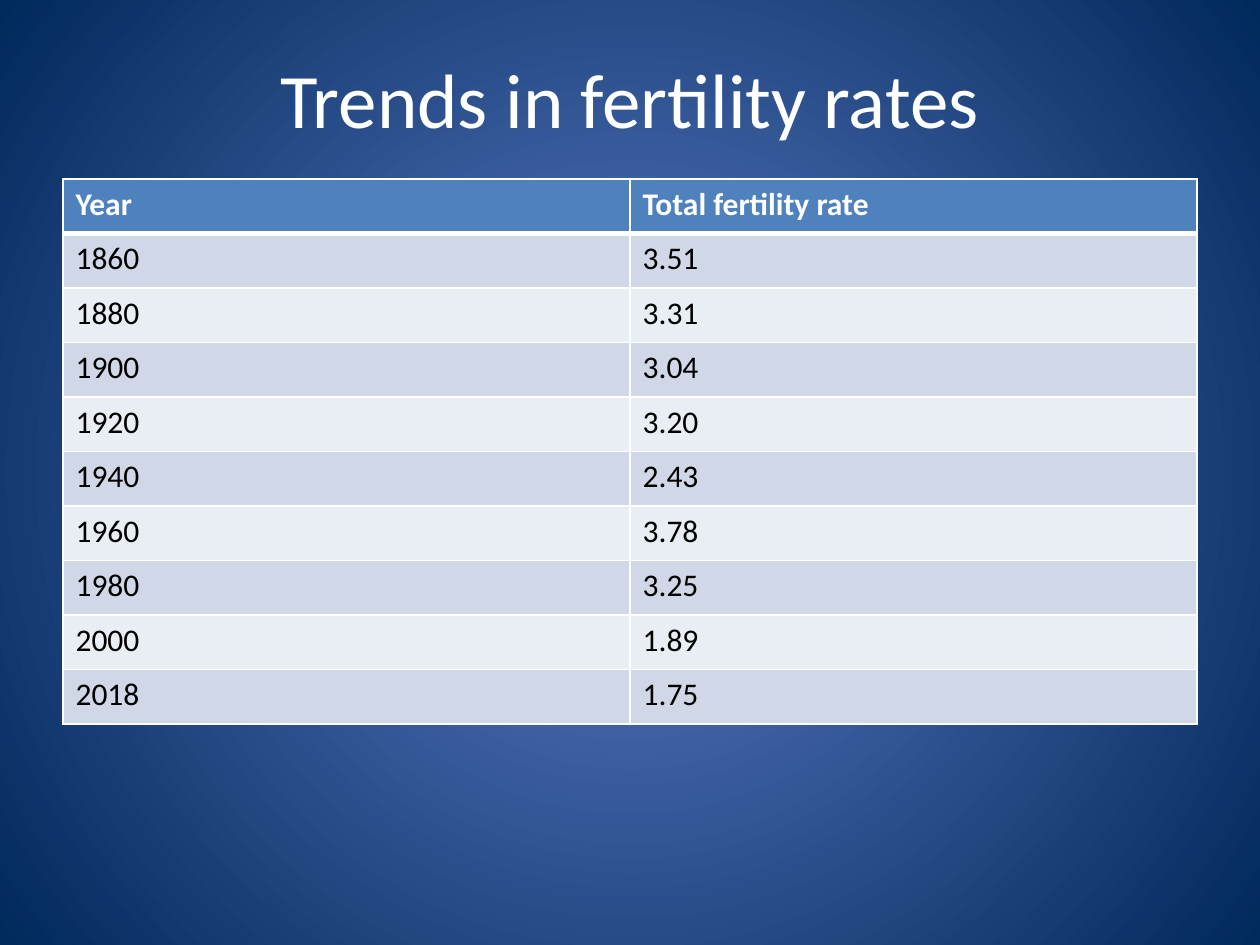
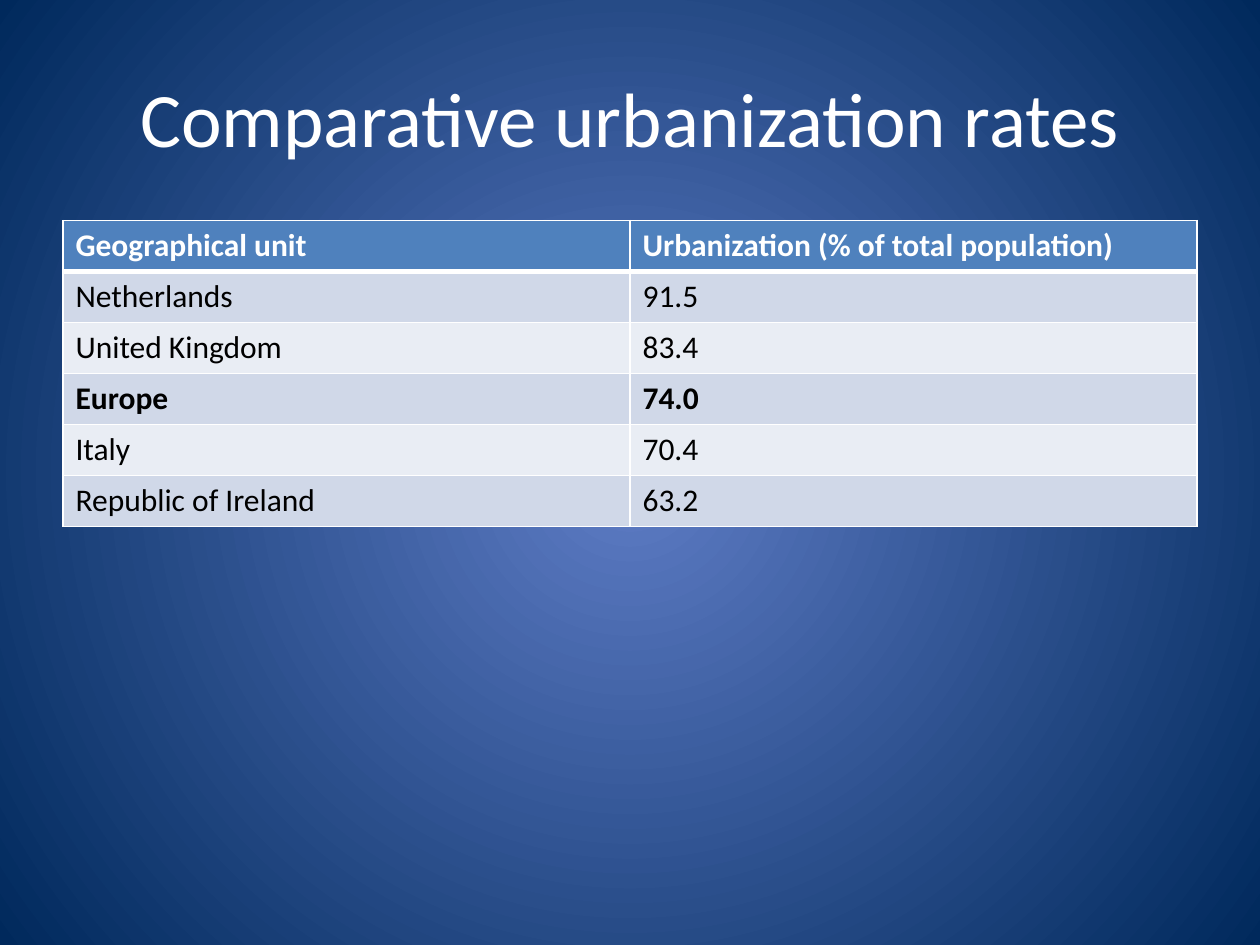
from lxml import etree
from pptx import Presentation
from pptx.dml.color import RGBColor
from pptx.enum import text as t
from pptx.oxml.ns import qn
from pptx.util import Inches, Pt

WHITE = RGBColor(0xFF, 0xFF, 0xFF)
BLACK = RGBColor(0x00, 0x00, 0x00)
GLOW_BLUE = RGBColor(0x5E, 0x7C, 0xC5)
NAVY = RGBColor(0x00, 0x29, 0x5C)
HEADER_BLUE = RGBColor(0x4F, 0x81, 0xBD)
BANDS = (RGBColor(0xD0, 0xD8, 0xE8), RGBColor(0xE9, 0xED, 0xF4))

FONT = "Calibri"
LEFT, WIDTH = 0.5, 9
TITLE_TOP = 0.3

FERTILITY = [
    ("Year", "Total fertility rate"),
    ("1860", "3.51"),
    ("1880", "3.31"),
    ("1900", "3.04"),
    ("1920", "3.20"),
    ("1940", "2.43"),
    ("1960", "3.78"),
    ("1980", "3.25"),
    ("2000", "1.89"),
    ("2018", "1.75"),
]
URBANIZATION = [
    ("Geographical unit", "Urbanization (% of total population)"),
    ("Netherlands", "91.5"),
    ("United Kingdom", "83.4"),
    ("Europe", "74.0"),
    ("Italy", "70.4"),
    ("Republic of Ireland", "63.2"),
]


def write(frame, content, size=18, color=BLACK, bold=False, align=t.PP_ALIGN.LEFT):
    paragraph = frame.paragraphs[0]
    paragraph.alignment = align
    run = paragraph.add_run()
    run.text = content
    run.font.name = FONT
    run.font.size = Pt(size)
    run.font.bold = bold
    run.font.color.rgb = color


def set_borders(cell, **widths):
    """Draw white cell borders; widths in points by side: L, R, T, B."""
    properties = cell._tc.get_or_add_tcPr()
    for position, side in enumerate("LRTB"):
        line = etree.Element(qn(f"a:ln{side}"), w=str(Pt(widths.get(side, 1))))
        fill = etree.SubElement(line, qn("a:solidFill"))
        etree.SubElement(fill, qn("a:srgbClr"), val=str(WHITE))
        properties.insert(position, line)


class Deck:
    def __init__(self):
        self.presentation = Presentation()
        self.presentation.slide_width = Inches(10)
        self.presentation.slide_height = Inches(7.5)
        self.slide = None

    def new_slide(self):
        self.slide = self.presentation.slides.add_slide(self.presentation.slide_layouts[6])
        self.background()

    def background(self):
        fill = self.slide.background.fill
        fill.gradient()
        for stop, color in zip(fill.gradient_stops, (GLOW_BLUE, NAVY)):
            stop.color.rgb = color
        # Turn the linear gradient into a circular one from the centre
        gradient = self.slide.element.find(".//" + qn("a:gradFill"))
        linear = gradient.find(qn("a:lin"))
        circle = etree.Element(qn("a:path"), {"path": "circle"})
        etree.SubElement(circle, qn("a:fillToRect"), dict.fromkeys("ltrb", "50000"))
        gradient.replace(linear, circle)

    def title(self, content, height):
        box = self.slide.shapes.add_textbox(
            Inches(LEFT), Inches(TITLE_TOP), Inches(WIDTH), Inches(height))
        frame = box.text_frame
        frame.word_wrap = True
        frame.vertical_anchor = t.MSO_ANCHOR.MIDDLE
        write(frame, content, size=44, color=WHITE, align=t.PP_ALIGN.CENTER)

    def table(self, rows, top, row_height, bold_row=None):
        table = self.slide.shapes.add_table(
            len(rows), len(rows[0]), Inches(LEFT), Inches(top),
            Inches(WIDTH), Inches(row_height * len(rows))).table
        table.horz_banding = False
        for row_index, values in enumerate(rows):
            header = row_index == 0
            for column_index, value in enumerate(values):
                cell = table.cell(row_index, column_index)
                cell.fill.solid()
                cell.fill.fore_color.rgb = HEADER_BLUE if header else BANDS[(row_index - 1) % 2]
                # A thick rule separates the header from the body
                set_borders(cell, B=3 if header else 1, T=3 if row_index == 1 else 1)
                write(cell.text_frame, value, color=WHITE if header else BLACK,
                      bold=header or values[0] == bold_row)


def main():
    deck = Deck()

    # Fertility rates
    deck.new_slide()
    deck.title("Trends in fertility rates", height=0.95)
    deck.table(FERTILITY, top=1.42, row_height=0.433)

    # Urbanization rates
    deck.new_slide()
    deck.title("Comparative urbanization rates", height=1.25)
    deck.table(URBANIZATION, top=1.75, row_height=0.405, bold_row="Europe")

    deck.presentation.save("out.pptx")


if __name__ == "__main__":
    main()
